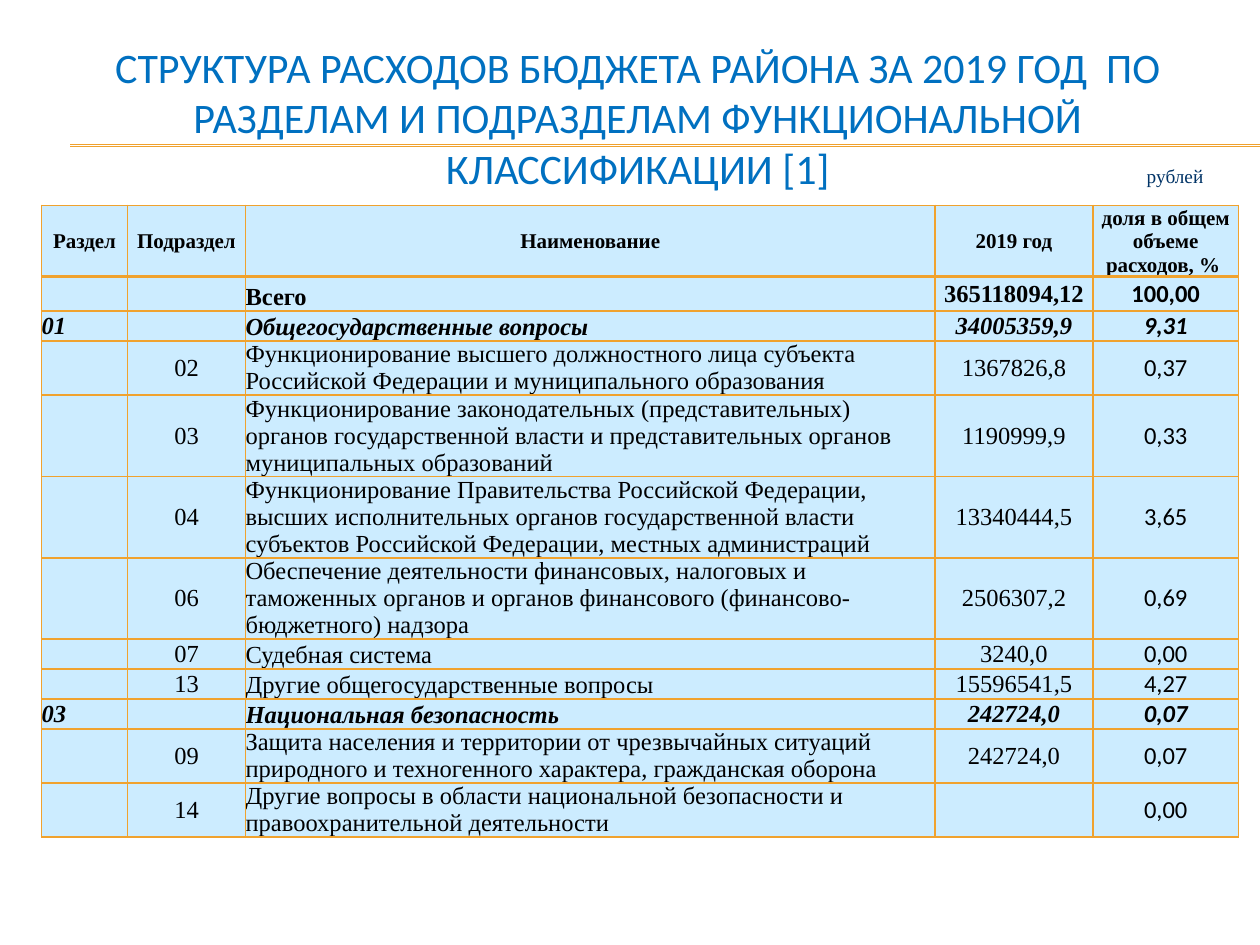
import pptx
import pptx.util
import pptx.dml.color
import pptx.enum.text
import pptx.enum.shapes
import pptx.oxml.ns
from lxml import etree

Cm, Pt = pptx.util.Cm, pptx.util.Pt
ALIGN, ANCHOR = pptx.enum.text.PP_ALIGN, pptx.enum.text.MSO_ANCHOR
qn = pptx.oxml.ns.qn

COLORS = {"title": "0070C0", "gold": "F0A22E", "cell": "CCECFF", "text": "000000", "unit": "003366"}
SERIF, SANS = "Times New Roman", "Calibri"
TITLE = "СТРУКТУРА РАСХОДОВ БЮДЖЕТА РАЙОНА ЗА 2019 ГОД  ПО РАЗДЕЛАМ И ПОДРАЗДЕЛАМ ФУНКЦИОНАЛЬНОЙ КЛАССИФИКАЦИИ [1]"
UNIT = "рублей"
HEADER = ["Раздел", "Подраздел", "Наименование", "2019 год", "доля в общем объеме расходов, % "]
ROWS = [
    ("", "", "Всего", "365118094,12", "100,00"),
    ("01", "", "Общегосударственные вопросы", "34005359,9", "9,31"),
    ("", "02", "Функционирование высшего должностного лица субъекта Российской Федерации и муниципального образования", "1367826,8", "0,37"),
    ("", "03", "Функционирование законодательных (представительных) органов государственной власти и представительных органов муниципальных образований", "1190999,9", "0,33"),
    ("", "04", "Функционирование Правительства Российской Федерации, высших исполнительных органов государственной власти субъектов Российской Федерации, местных администраций", "13340444,5", "3,65"),
    ("", "06", "Обеспечение деятельности финансовых, налоговых и таможенных органов и органов финансового (финансово-бюджетного) надзора", "2506307,2", "0,69"),
    ("", "07", "Судебная система", "3240,0", "0,00"),
    ("", "13", "Другие общегосударственные вопросы", "15596541,5", "4,27"),
    ("03", "", "Национальная безопасность", "242724,0", "0,07"),
    ("", "09", "Защита населения и территории от чрезвычайных ситуаций природного и техногенного характера, гражданская оборона", "242724,0", "0,07"),
    ("", "14", "Другие вопросы в области национальной безопасности и правоохранительной деятельности", "", "0,00"),
]
COL_WIDTHS = [1.73, 2.38, 13.9, 3.18, 2.94]
HEADER_HEIGHT, TOTAL_HEIGHT = 1.43, 0.69
LINE_HEIGHTS = {1: 0.6, 2: 1.09, 3: 1.64}
ROW_LINES = [1, 2, 3, 3, 3, 1, 1, 1, 2, 2]
NAME_COL, SHARE_COL = 2, 4


def rgb(name):
    return pptx.dml.color.RGBColor.from_string(COLORS[name])


def style(p, font, size, color, align, bold=False, italic=False):
    p.alignment = align
    f = p.font
    f.name, f.size, f.bold, f.italic = font, Pt(size), bold, italic
    f.color.rgb = rgb(color)


def set_borders(cell, bottom):
    tc_pr = cell._tc.get_or_add_tcPr()
    for i, (side, width) in enumerate([("lnL", 1), ("lnR", 1), ("lnT", 1), ("lnB", bottom)]):
        ln = etree.Element(qn("a:" + side), w=str(Pt(width)))
        fill = etree.SubElement(ln, qn("a:solidFill"))
        etree.SubElement(fill, qn("a:srgbClr"), val=COLORS["gold"])
        tc_pr.insert(i, ln)


def fill_cell(cell, text, row, col, bold, italic):
    head = row == 0
    cell.text = text
    cell.margin_left = cell.margin_right = cell.margin_top = Cm(0.03 if head else 0)
    cell.margin_bottom = 0
    bottom = col == (SHARE_COL if head else NAME_COL)
    cell.vertical_anchor = ANCHOR.BOTTOM if bottom else ANCHOR.MIDDLE
    left = not head and col in (0, NAME_COL)
    font = SANS if col == SHARE_COL and not head else SERIF
    style(cell.text_frame.paragraphs[0], font, 12 if head else 14, "text",
          ALIGN.LEFT if left else ALIGN.CENTER, bold, italic)
    cell.fill.solid()
    cell.fill.fore_color.rgb = rgb("cell")
    set_borders(cell, 2 if head else 1)


def add_rules(s):
    for y in (2.92, 2.95):
        line = s.shapes.add_connector(pptx.enum.shapes.MSO_CONNECTOR.STRAIGHT,
                                      Cm(1.42), Cm(y), Cm(25.4), Cm(y))
        line.line.color.rgb = rgb("gold")
        line.line.width = Pt(0.75)
        etree.SubElement(line._element.spPr, qn("a:effectLst"))


def add_title(s):
    title = s.shapes.title
    title.left, title.top, title.width, title.height = Cm(0.79), Cm(1.19), Cm(24.13), Cm(2.34)
    tf = title.text_frame
    tf.text = TITLE
    tf.auto_size = pptx.enum.text.MSO_AUTO_SIZE.NONE
    tf.vertical_anchor = ANCHOR.MIDDLE
    style(tf.paragraphs[0], SANS, 24, "title", ALIGN.CENTER)
    s.shapes._spTree.append(title._element)


def add_budget_table(s):
    heights = [HEADER_HEIGHT, TOTAL_HEIGHT] + [LINE_HEIGHTS[n] for n in ROW_LINES]
    table = s.shapes.add_table(len(heights), len(COL_WIDTHS), Cm(0.84), Cm(4.14),
                               Cm(sum(COL_WIDTHS)), Cm(sum(heights))).table
    table.first_row = table.horz_banding = False
    for column, width in zip(table.columns, COL_WIDTHS):
        column.width = Cm(width)
    for i, (height, values) in enumerate(zip(heights, [HEADER] + ROWS)):
        table.rows[i].height = Cm(height)
        section = i > 0 and values[0] != ""
        for j, text in enumerate(values):
            fill_cell(table.cell(i, j), text, i, j, i < 2 or section, section)


def add_unit(s):
    tf = s.shapes.add_textbox(Cm(22.83), Cm(3.18), Cm(1.68), Cm(0.74)).text_frame
    tf.word_wrap = False
    tf.auto_size = pptx.enum.text.MSO_AUTO_SIZE.SHAPE_TO_FIT_TEXT
    tf.text = UNIT
    style(tf.paragraphs[0], SERIF, 11, "unit", ALIGN.RIGHT)


def main():
    """Build the slide with the district's budget expenditure by section."""
    prs = pptx.Presentation()
    prs.slide_width, prs.slide_height = Cm(25.4), Cm(19.05)
    s = prs.slides.add_slide(prs.slide_layouts[5])
    add_rules(s)
    add_title(s)
    add_budget_table(s)
    add_unit(s)
    prs.save("out.pptx")


if __name__ == "__main__":
    main()
